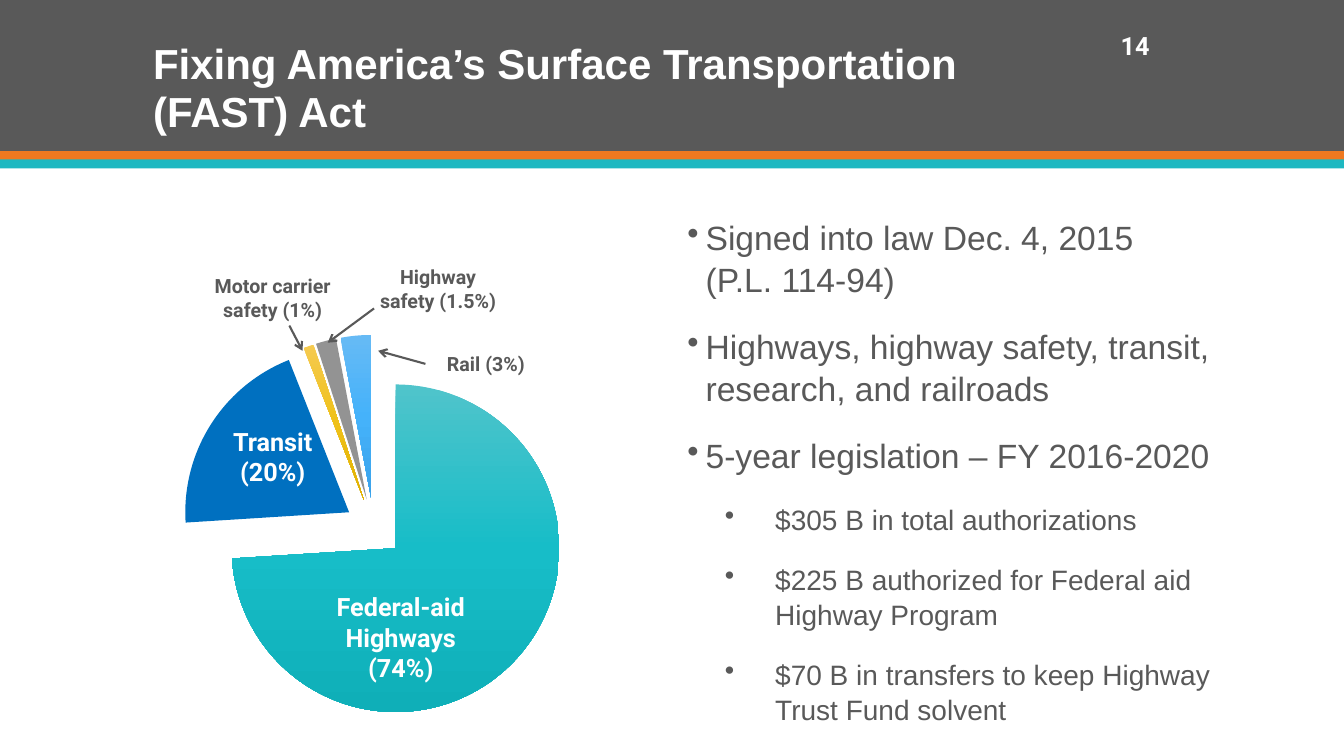
from copy import deepcopy
from lxml import etree
from pptx import Presentation
from pptx.chart.data import CategoryChartData
from pptx.dml.color import RGBColor
from pptx.enum.chart import XL_CHART_TYPE as CT
from pptx.enum.shapes import MSO_CONNECTOR as MC, MSO_SHAPE as MS
from pptx.enum.text import MSO_ANCHOR as MA, PP_ALIGN as PA
from pptx.oxml import parse_xml
from pptx.oxml.ns import nsdecls, qn
from pptx.util import Inches, Pt

GREY, WHITE, ORANGE, TEAL = "595959", "FFFFFF", "EF7920", "1EB8C1"
rgb = RGBColor.from_string

prs = Presentation()
prs.slide_width, prs.slide_height = Inches(13.33), Inches(7.5)
s = prs.slides.add_slide(prs.slide_layouts[6])


def add_text(box, lines, size, color, font="Roboto", bold=True, align=PA.CENTER,
             anchor=MA.TOP):
    tf = s.shapes.add_textbox(*map(Inches, box)).text_frame
    tf.word_wrap, tf.vertical_anchor = True, anchor
    for i, line in enumerate(lines):
        p = tf.paragraphs[0] if i == 0 else tf.add_paragraph()
        p.text, p.alignment = line, align
        f = p.font
        f.size, f.name, f.bold, f.color.rgb = Pt(size), font, bold, rgb(color)
    return tf


# Header band and stripes
for top, height, color in [(0, 1.5, GREY), (1.5, 0.09, ORANGE), (1.58, 0.09, TEAL)]:
    sp = s.shapes.add_shape(MS.RECTANGLE, 0, Inches(top), prs.slide_width, Inches(height))
    sp.shadow.inherit = False
    sp.fill.solid()
    sp.fill.fore_color.rgb = rgb(color)
    sp.line.fill.background()

# Title and slide number
tf = add_text((1.42, 0.28, 10.5, 1.13), ["Fixing America’s Surface Transportation\v(FAST) Act"],
              30, WHITE, "Arial", align=PA.LEFT, anchor=MA.BOTTOM)
tf.paragraphs[0].line_spacing = 0.95
add_text((9.17, 0.25, 2.33, 0.4), ["14"], 18, WHITE, align=PA.RIGHT)

# Funding pie
data = CategoryChartData()
data.categories = ["1", "2", "3", "4", "5"]
data.add_series("Series 1", (74, 20, 1, 2, 3))
chart = s.shapes.add_chart(CT.PIE, *map(Inches, (1.67, 3.06, 4.08, 4.36)), data).chart
chart.has_legend = chart.has_title = False
chart.font.size, chart.font.name, chart.font.color.rgb = Pt(18), "Roboto", rgb(GREY)
plot = chart.plots[0]
plot.vary_by_categories = True
series = plot.series[0]
slices = [("50C4CB", "17BDC8", "0FAFB8"), ("0070C0",), ("F5CA50", "EFC119", "E0B000"),
          ("939393",), ("66BAF5", "45B2FA", "3AA2EA")]
for i, colors in enumerate(slices):
    fill = series.points[i].format.fill
    if len(colors) == 1:
        fill.solid()
        fill.fore_color.rgb = rgb(colors[0])
        continue
    fill.gradient()
    fill.gradient_angle = 270
    stops = series._element.findall(".//" + qn("a:gsLst"))[-1]
    stops.insert(1, deepcopy(stops[0]))
    for k, (stop, color) in enumerate(zip(fill.gradient_stops, colors)):
        stop.position, stop.color.rgb = k / 2, rgb(color)

# Slices pulled apart, pie centred in its frame
explosion = etree.Element(qn("c:explosion"), val="18")
series._element.find(qn("c:dPt")).addprevious(explosion)
area = chart._chartSpace.find(".//" + qn("c:plotArea"))
for old in area.findall(qn("c:layout")):
    area.remove(old)
area.insert(0, parse_xml(
    f'<c:layout {nsdecls("c")}><c:manualLayout><c:layoutTarget val="inner"/>'
    '<c:xMode val="edge"/><c:yMode val="edge"/><c:x val="0.03"/><c:y val="0.06"/>'
    '<c:w val="0.94"/><c:h val="0.88"/></c:manualLayout></c:layout>'))

# Slice labels
for box, lines, size, color in [
    ((3.17, 5.82, 1.61, 1.01), ["Federal-aid Highways (74%)"], 18, WHITE),
    ((1.9, 4.18, 1.61, 0.71), ["Transit", "(20%)"], 18, WHITE),
    ((1.87, 2.67, 1.67, 0.57), ["Motor carrier safety (1%)"], 14, GREY),
    ((3.64, 2.58, 1.41, 0.57), ["Highway safety (1.5%)"], 14, GREY),
    ((4.22, 3.44, 1.2, 0.34), ["Rail (3%)"], 14, GREY),
]:
    add_text(box, lines, size, color)

# Arrows from labels to slices
for ends in [(2.87, 3.23, 3, 3.48), (3.71, 3.06, 3.25, 3.4), (4.22, 3.61, 3.75, 3.48)]:
    c = s.shapes.add_connector(MC.STRAIGHT, *map(Inches, ends))
    c.line.color.rgb, c.line.width = rgb(GREY), Pt(1.5)
    etree.SubElement(c.line._get_or_add_ln(), qn("a:tailEnd"), type="arrow")
    etree.SubElement(c._element.spPr, qn("a:effectLst"))

# Bulleted facts
facts = ["Signed into law Dec. 4, 2015\v(P.L. 114-94)",
         "Highways, highway safety, transit, research, and railroads",
         "5-year legislation – FY 2016-2020",
         "$305 B in total authorizations",
         "$225 B authorized for Federal aid Highway Program",
         "$70 B in transfers to keep Highway Trust Fund solvent"]
tf = add_text((6.65, 2.09, 5.48, 5.1), facts, 24, GREY, "Arial", False, PA.LEFT)
for i, p in enumerate(tf.paragraphs):
    p.level = int(i > 2)
    left, hang, size = [(0.25, -0.18, 24), (0.94, -0.5, 20)][p.level]
    pPr = p._p.get_or_add_pPr()
    pPr.set("marL", str(Inches(left)))
    pPr.set("indent", str(Inches(hang)))
    p.space_after, p.line_spacing, p.font.size = Pt(18), 1.04, Pt(size)
    bullet = etree.Element(qn("a:buChar"), char="•")
    pPr.find(qn("a:defRPr")).addprevious(bullet)

prs.save("out.pptx")
